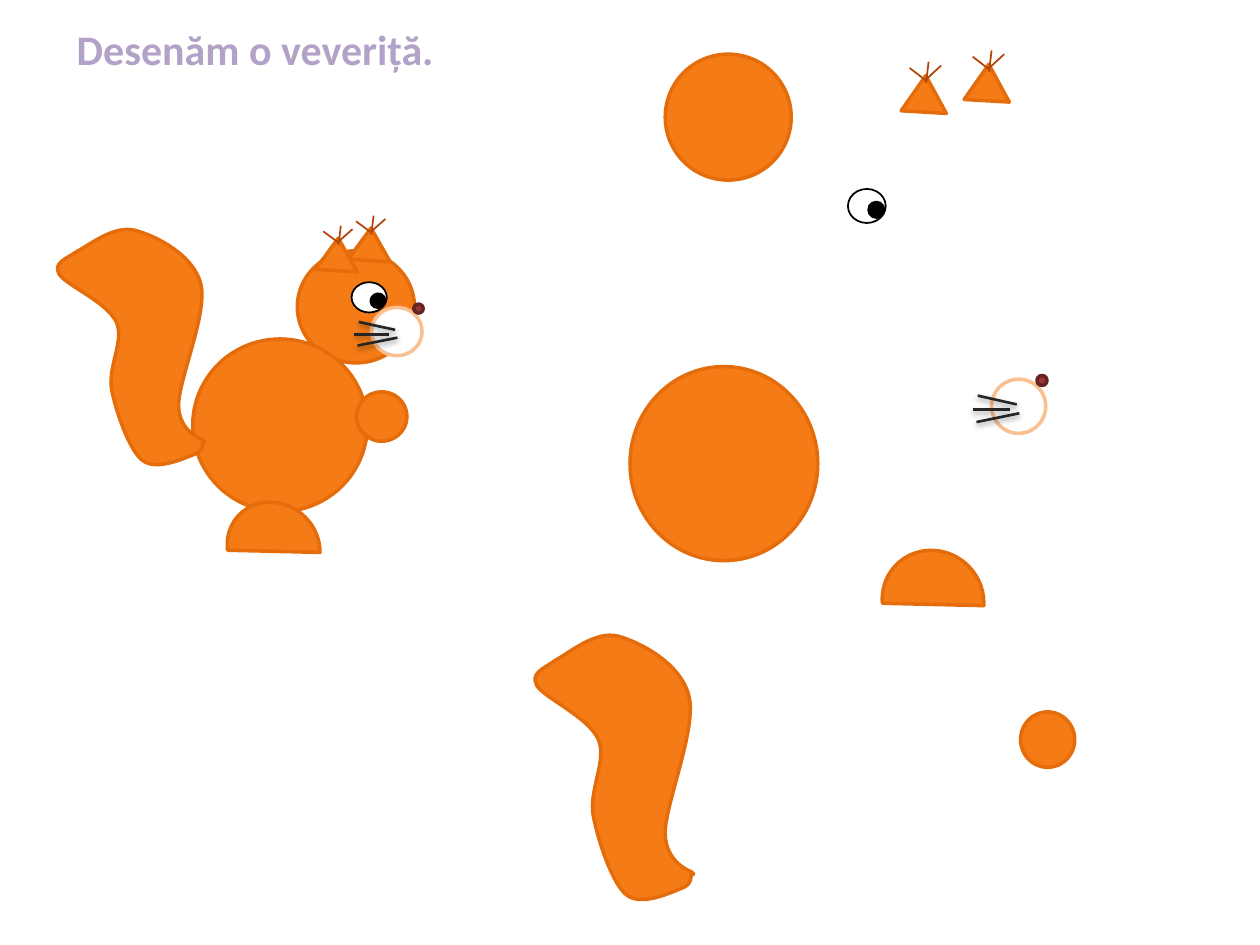
from lxml import etree
from pptx import Presentation
from pptx.dml.color import RGBColor
from pptx.enum.shapes import MSO_CONNECTOR, MSO_SHAPE
from pptx.enum.text import MSO_ANCHOR, PP_ALIGN
from pptx.oxml.ns import qn
from pptx.util import Inches, Pt

OVAL, CHORD, TRIANGLE = MSO_SHAPE.OVAL, MSO_SHAPE.CHORD, MSO_SHAPE.ISOSCELES_TRIANGLE
STRAIGHT = MSO_CONNECTOR.STRAIGHT
CENTER, MIDDLE = PP_ALIGN.CENTER, MSO_ANCHOR.MIDDLE

ORANGE = RGBColor(0xF5, 0x7B, 0x17)
DARK_ORANGE = RGBColor(0xE4, 0x6C, 0x0A)
PEACH = RGBColor(0xFA, 0xC0, 0x90)
RUST = RGBColor(0xB4, 0x45, 0x08)
RED = RGBColor(0x95, 0x37, 0x34)
DARK_RED = RGBColor(0x63, 0x24, 0x23)
CHARCOAL = RGBColor(0x26, 0x26, 0x26)
BLACK = RGBColor(0, 0, 0)
WHITE = RGBColor(0xFF, 0xFF, 0xFF)
LILAC = RGBColor(0xB3, 0xA2, 0xC7)

FULL = (1, 1)
SMALL = (0.93, 0.89)

TUFT = [(0.06, -0.06, 0.19, 0.04), (0.21, -0.11, 0.19, 0.06), (0.31, -0.08, 0.18, 0.04)]
WHISKERS = [(-0.12, 0.34, 0.22, 0.27), (-0.15, 0.24, 0.15, 0.24), (-0.11, 0.13, 0.2, 0.2)]
TAIL_START = (0.16, 0.2)
TAIL_CURVES = [
    [(0.27, 0.14), (0.48, -0.04), (0.66, 0.01)],
    [(0.84, 0.06), (1.16, 0.23), (1.22, 0.49)],
    [(1.28, 0.75), (1.03, 1.34), (1.03, 1.57)],
    [(1.03, 1.81), (1.24, 1.88), (1.24, 1.88)],
    [(1.27, 1.93), (1.25, 1.87), (1.24, 1.89)],
    [(1.23, 1.91), (1.25, 1.98), (1.16, 2.01)],
    [(1.08, 2.04), (0.84, 2.16), (0.72, 2.06)],
    [(0.61, 1.97), (0.5, 1.64), (0.46, 1.44)],
    [(0.42, 1.23), (0.57, 1.0), (0.5, 0.83)],
    [(0.42, 0.65), (0.07, 0.5), (0.01, 0.4)],
    [(-0.04, 0.3), (0.06, 0.27), (0.16, 0.2)],
]


def style(sp, fill=ORANGE, line=DARK_ORANGE, width=2):
    """Give a shape a flat fill and an outline."""
    sp.shadow.inherit = False
    sp.fill.solid()
    sp.fill.fore_color.rgb = fill
    sp.line.color.rgb = line
    sp.line.width = Pt(width)


def add_part(shapes, kind, x, y, w, h, scale, *colours):
    """Add a preset shape whose size is multiplied by scale."""
    sp = shapes.add_shape(kind, Inches(x), Inches(y), Inches(w * scale[0]), Inches(h * scale[1]))
    style(sp, *colours)
    return sp


def add_strokes(shapes, x, y, strokes, scale, color, width, shadow=False):
    """Add straight lines given as offsets from one point."""
    sx, sy = scale
    for x1, y1, x2, y2 in strokes:
        ln = shapes.add_connector(STRAIGHT, Inches(x + x1 * sx), Inches(y + y1 * sy),
                                  Inches(x + x2 * sx), Inches(y + y2 * sy))
        ln.line.color.rgb = color
        ln.line.width = Pt(width)
        effects = etree.SubElement(ln._element.spPr, qn("a:effectLst"))
        if shadow:
            outer = etree.SubElement(effects, qn("a:outerShdw"), blurRad="40000",
                                     dist="20000", dir="5400000", rotWithShape="0")
            clr = etree.SubElement(outer, qn("a:srgbClr"), val="000000")
            etree.SubElement(clr, qn("a:alpha"), val="38000")


def add_head(shapes, x, y, scale=FULL):
    """Add the round head."""
    add_part(shapes, OVAL, x, y, 1, 1, scale)


def add_body(shapes, x, y, scale=FULL):
    """Add the round body."""
    add_part(shapes, OVAL, x, y, 1.49, 1.54, scale)


def add_arm(shapes, x, y, scale=FULL):
    """Add the round arm."""
    add_part(shapes, OVAL, x, y, 0.43, 0.44, scale)


def add_foot(shapes, x, y, scale=FULL):
    """Add the half-disc foot, turned so that its axes swap scale."""
    sp = add_part(shapes, CHORD, x, y, 0.79, 0.82, scale[::-1])
    sp.adjustments[0], sp.adjustments[1] = 27, 139.6
    sp.rotation = 132.5


def add_eye(shapes, x, y, scale=FULL):
    """Add the eye with its pupil."""
    add_part(shapes, OVAL, x, y, 0.3, 0.27, scale, WHITE, BLACK, 1)
    pupil = add_part(shapes, OVAL, x + 0.16 * scale[0], y + 0.1 * scale[1], 0.13, 0.13, scale,
                     BLACK, BLACK, 1)
    pupil.rotation = 328.6


def add_ears(shapes, x, y, gap, scale=FULL):
    """Add the two tufted ears, the right one first."""
    for left, top in ((x + gap, y - 0.09 * scale[1]), (x, y)):
        add_part(shapes, TRIANGLE, left, top, 0.36, 0.29, scale).rotation = 3.3
        add_strokes(shapes, left, top, TUFT, scale, RUST, 1)


def add_muzzle(shapes, x, y, scale=FULL):
    """Add the muzzle, nose and whiskers."""
    add_part(shapes, OVAL, x, y, 0.43, 0.43, scale, WHITE, PEACH)
    add_part(shapes, OVAL, x + 0.36 * scale[0], y - 0.03 * scale[1], 0.08, 0.08, scale,
             RED, DARK_RED)
    add_strokes(shapes, x, y, WHISKERS, scale, CHARCOAL, 1.5, shadow=True)


def add_tail(shapes, x, y, scale=FULL):
    """Add the tail as a closed outline of cubic curves."""
    def place(point):
        return Inches(x + point[0] * scale[0]), Inches(y + point[1] * scale[1])

    builder = shapes.build_freeform(*place(TAIL_START))
    builder.add_line_segments([place(curve[-1]) for curve in TAIL_CURVES], close=True)
    sp = builder.convert_to_shape()
    segments = list(sp._element.iter(qn("a:lnTo")))
    for segment, curve in zip(segments, TAIL_CURVES):
        cubic = etree.Element(qn("a:cubicBezTo"))
        for px, py in map(place, curve):
            etree.SubElement(cubic, qn("a:pt"), x=str(px - sp.left), y=str(py - sp.top))
        segment.getparent().replace(segment, cubic)
    style(sp)


def add_squirrel(shapes):
    """Add the assembled squirrel."""
    add_head(shapes, 2.36, 1.99, SMALL)
    add_body(shapes, 1.53, 2.69, SMALL)
    add_arm(shapes, 2.83, 3.11, SMALL)
    add_foot(shapes, 1.82, 3.97, SMALL)
    add_muzzle(shapes, 2.95, 2.44, SMALL)
    add_eye(shapes, 2.79, 2.24, SMALL)
    add_ears(shapes, 2.51, 1.89, 0.26, SMALL)
    add_tail(shapes, 0.46, 1.82, SMALL)


def add_title(slide, text):
    """Fill and place the title."""
    sp = slide.shapes.title
    sp.left, sp.top, sp.width, sp.height = Inches(0.49), Inches(0.14), Inches(3.07), Inches(0.5)
    tf = sp.text_frame
    tf.text = text
    tf.word_wrap = False
    tf.vertical_anchor = MIDDLE
    p = tf.paragraphs[0]
    p.alignment = CENTER
    p.font.name, p.font.size, p.font.bold = "Calibri", Pt(24), True
    p.font.color.rgb = LILAC


def main():
    """Build the slide and save it."""
    prs = Presentation()
    prs.slide_width, prs.slide_height = Inches(10), Inches(7.5)
    slide = prs.slides.add_slide(prs.slide_layouts[5])
    shapes = slide.shapes
    add_title(slide, "Desenăm o veveriță.")
    add_squirrel(shapes.add_group_shape().shapes)
    add_head(shapes, 5.28, 0.43)
    add_body(shapes, 5, 2.91)
    add_arm(shapes, 8.1, 5.65)
    add_foot(shapes, 7.01, 4.36)
    add_eye(shapes.add_group_shape().shapes, 6.73, 1.5)
    add_ears(shapes.add_group_shape().shapes, 7.16, 0.6, 0.5)
    add_muzzle(shapes.add_group_shape().shapes, 7.87, 3.01)
    add_tail(shapes, 4.25, 5.04)
    prs.save("out.pptx")


if __name__ == "__main__":
    main()
